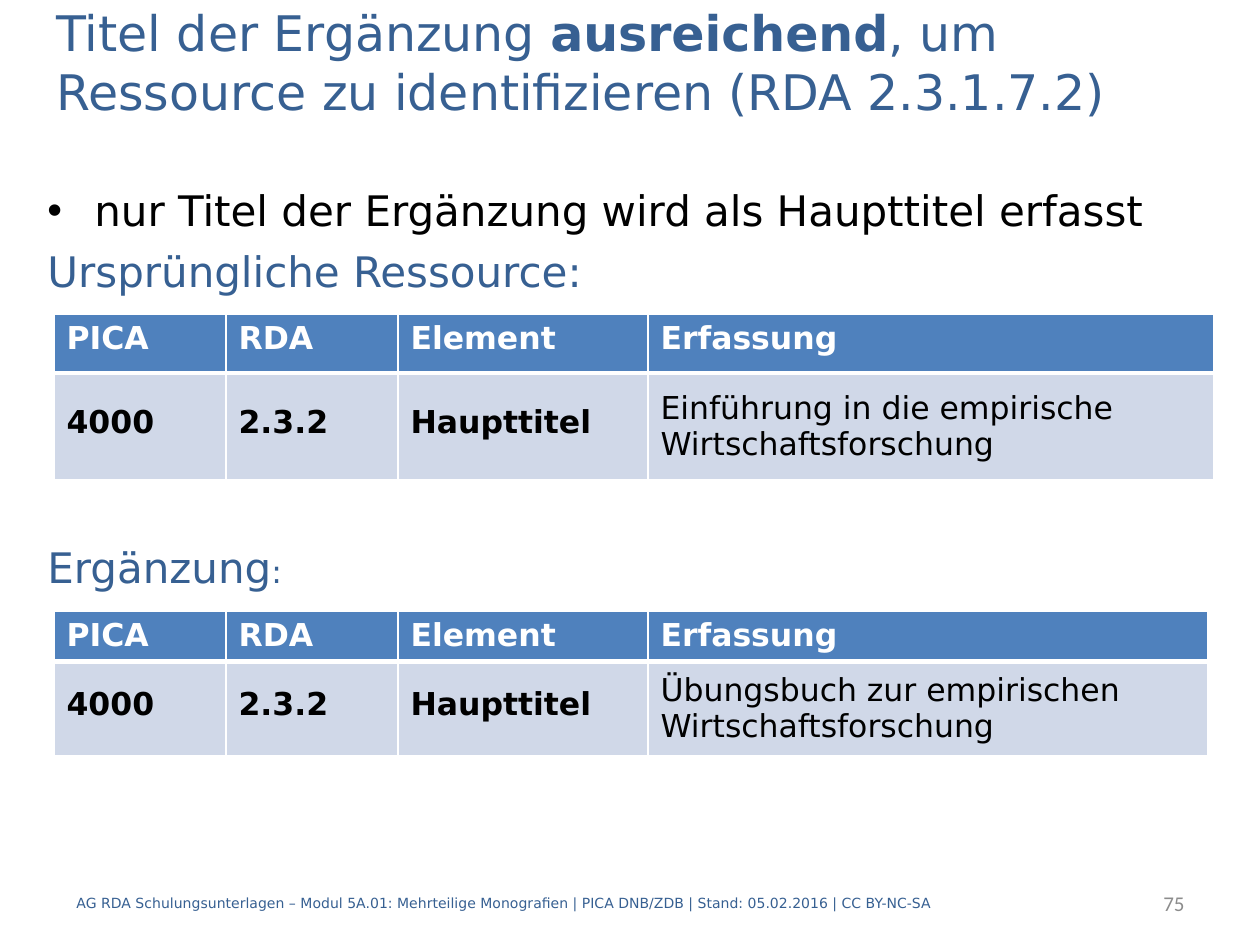
import dataclasses

import pptx
import pptx.dml.color
import pptx.enum.text
import pptx.oxml
import pptx.oxml.ns
import pptx.util

ANCHOR = pptx.enum.text.MSO_ANCHOR
ALIGN = pptx.enum.text.PP_ALIGN
Pt = pptx.util.Pt


@dataclasses.dataclass(frozen=True)
class Theme:
    font: str = "DejaVu Sans"
    number_font: str = "Calibri"
    blue: str = "376092"
    black: str = "000000"
    white: str = "FFFFFF"
    gray: str = "8C8C8C"
    header_fill: str = "4F81BD"
    row_fill: str = "D0D8E8"
    title: int = 28
    body: int = 24
    table: int = 18
    number: int = 12
    footer: int = 8


def px(n):
    return round(n * 914400 / 126)


def set_attrs(obj, values):
    for name, value in values.items():
        setattr(obj, name, value)


class Deck:
    def __init__(self, theme):
        self.theme = theme
        self.prs = pptx.Presentation()
        set_attrs(self.prs, {"slide_width": px(1260), "slide_height": px(945)})
        self.s = self.prs.slides.add_slide(self.prs.slide_layouts[5])

    def place(self, sp, box):
        set_attrs(sp, dict(zip(("left", "top", "width", "height"), map(px, box))))

    def paragraph(self, p, runs, size, color, spacing=None, **font):
        """Fill a paragraph from (text, font overrides) pairs."""
        set_attrs(p, {"alignment": ALIGN.LEFT, **(spacing or {})})
        for text, extra in runs:
            r = p.add_run()
            r.text = text
            set_attrs(r.font, {"name": self.theme.font, "size": Pt(size),
                               "bold": False, **font, **extra})
            r.font.color.rgb = pptx.dml.color.RGBColor.from_string(color)

    def title(self, box, runs):
        sp = self.s.shapes.title
        self.place(sp, box)
        tf = sp.text_frame
        set_attrs(tf, {"word_wrap": True, "vertical_anchor": ANCHOR.MIDDLE,
                       "auto_size": pptx.enum.text.MSO_AUTO_SIZE.NONE})
        self.paragraph(tf.paragraphs[0], runs, self.theme.title, self.theme.blue)

    def text(self, box, **frame):
        tf = self.s.shapes.add_textbox(*map(px, box)).text_frame
        set_attrs(tf, {"word_wrap": True, **frame})
        return tf

    def bullet(self, p, indent):
        pPr = p._p.get_or_add_pPr()
        pPr.set("marL", str(px(indent)))
        pPr.set("indent", str(-px(indent)))
        ns = pptx.oxml.ns.nsdecls("a")
        pPr.append(pptx.oxml.parse_xml(f'<a:buFont {ns} typeface="Arial"/>'))
        pPr.append(pptx.oxml.parse_xml(f'<a:buChar {ns} char="•"/>'))

    def borders(self, cell, widths):
        """Draw white cell edges; widths maps L, R, T and B to points."""
        ns = pptx.oxml.ns.nsdecls("a")
        tcPr = cell._tc.get_or_add_tcPr()
        for i, (side, width) in enumerate(widths.items()):
            tcPr.insert(i, pptx.oxml.parse_xml(
                f'<a:ln{side} {ns} w="{int(Pt(width))}"><a:solidFill>'
                f'<a:srgbClr val="{self.theme.white}"/></a:solidFill></a:ln{side}>'))

    def table(self, left, top, cols, heights, rows):
        t = self.theme
        tbl = self.s.shapes.add_table(
            len(rows), len(cols), px(left), px(top),
            px(sum(cols)), px(sum(heights))).table
        for col, width in zip(tbl.columns, cols):
            col.width = px(width)
        for i, (row, height) in enumerate(zip(rows, heights)):
            tbl.rows[i].height = px(height)
            header = i == 0
            for j, text in enumerate(row):
                cell = tbl.cell(i, j)
                last = j == len(cols) - 1
                spacing = {}
                if not header:
                    cell.vertical_anchor = ANCHOR.MIDDLE
                    spacing = {"space_before": Pt(6), "space_after": Pt(6)}
                    if not last:
                        spacing["line_spacing"] = Pt(16)
                self.paragraph(cell.text_frame.paragraphs[0], [(text, {})], t.table,
                               t.white if header else t.black, spacing,
                               bold=header or not last)
                cell.fill.solid()
                cell.fill.fore_color.rgb = pptx.dml.color.RGBColor.from_string(
                    t.header_fill if header else t.row_fill)
                self.borders(cell, {"L": 1, "R": 1, "T": 1 if header else 3,
                                    "B": 3 if header else 1})


def main():
    t = Theme()
    d = Deck(t)
    d.title((44, 26, 1191, 71), [
        ("Titel der Ergänzung ", {}),
        ("ausreichend", {"bold": True}),
        (", um Ressource zu identifizieren (RDA 2.3.1.7.2)", {})])

    tf = d.text((35, 116, 1191, 129), margin_top=px(69))
    lines = [
        ([("nur Titel der Ergänzung wird als Haupttitel erfasst", {})], t.black, 0),
        ([("Ursprüngliche Ressource:", {})], t.blue, 6),
        ([("Ergänzung", {}), (":", {"size": Pt(t.table)})], t.blue, 140)]
    for i, (runs, color, gap) in enumerate(lines):
        p = tf.add_paragraph() if i else tf.paragraphs[0]
        d.paragraph(p, runs, t.body, color, {"space_before": Pt(gap)})
    d.bullet(tf.paragraphs[0], 47)

    header = ("PICA", "RDA", "Element", "Erfassung")
    for top, last_col, heights, title in (
            (314, 566, (59, 107),
             "Einführung in die empirische Wirtschaftsforschung"),
            (611, 560, (49, 94),
             "Übungsbuch zur empirischen Wirtschaftsforschung")):
        d.table(54, top, (172, 172, 250, last_col), heights,
                (header, ("4000", "2.3.2", "Haupttitel", title)))

    footer = d.text((64, 878, 1052, 50), vertical_anchor=ANCHOR.MIDDLE)
    d.paragraph(footer.paragraphs[0], [(
        "AG RDA Schulungsunterlagen – Modul 5A.01: Mehrteilige Monografien | "
        "PICA DNB/ZDB | Stand: 05.02.2016 | CC BY-NC-SA", {})], t.footer, t.blue)
    number = d.text((997, 878, 200, 50), vertical_anchor=ANCHOR.MIDDLE)
    d.paragraph(number.paragraphs[0], [("75", {})], t.number, t.gray,
                {"alignment": ALIGN.RIGHT}, name=t.number_font)

    d.prs.save("out.pptx")


if __name__ == "__main__":
    main()
